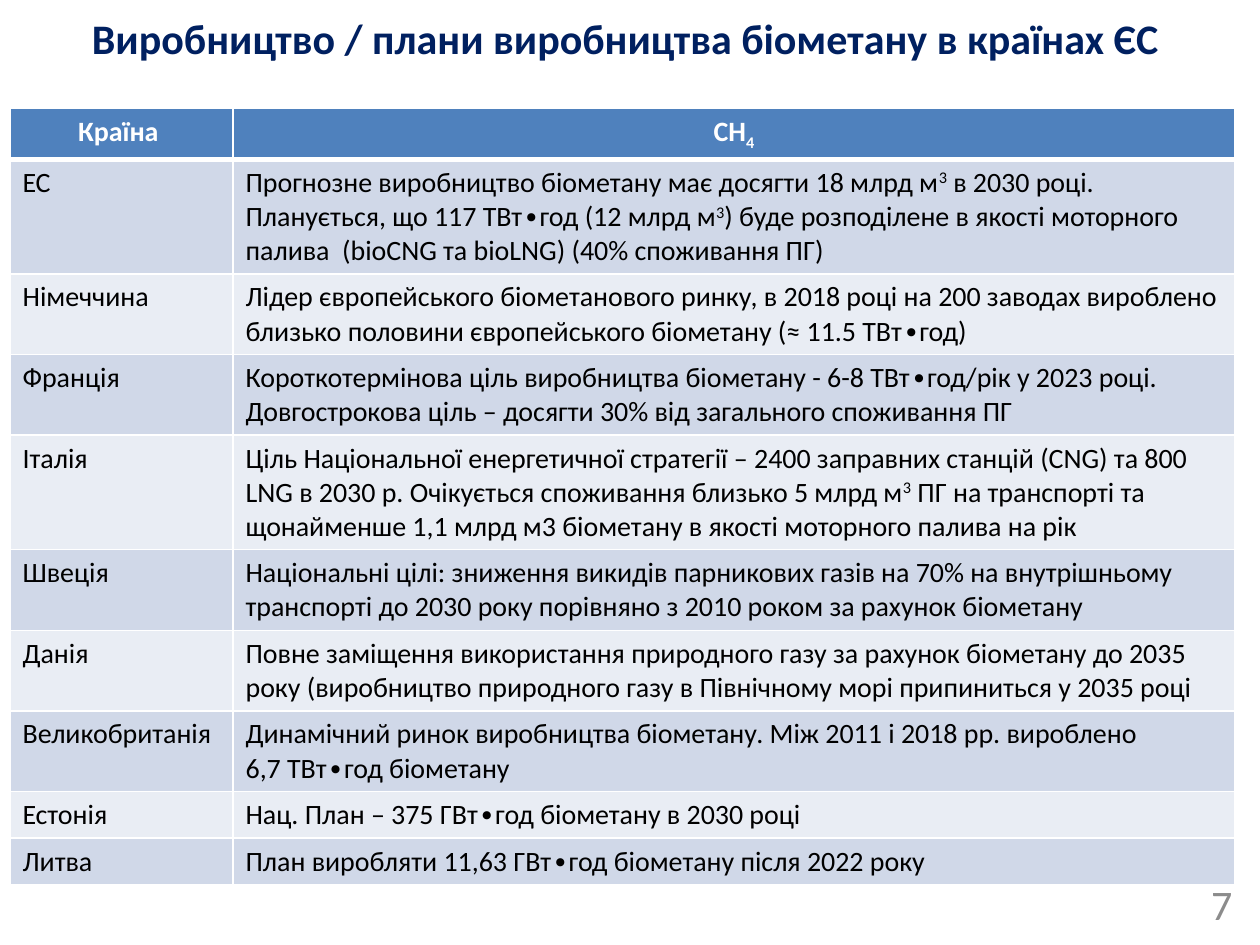
from dataclasses import dataclass
from typing import NamedTuple

from lxml import etree
from pptx import Presentation
from pptx.dml.color import RGBColor
from pptx.enum import text
from pptx.oxml import ns
from pptx.util import Inches, Pt


@dataclass(frozen=True)
class Theme:
    font: str = "Calibri"
    title_size: int = 24
    table_size: int = 16
    number_size: int = 24
    navy: str = "002060"
    gray: str = "8C8C8C"
    white: str = "FFFFFF"
    black: str = "000000"
    header: str = "4F81BD"
    bands: tuple[str, str] = ("D0D8E8", "E9EDF4")


class Style(NamedTuple):
    size: int
    color: str
    bold: bool = False


class Span(NamedTuple):
    text: str
    baseline: int = 0  # percent: positive raises, negative lowers


class Row(NamedTuple):
    country: str
    spans: list[Span]
    lines: int


THEME = Theme()
CUBED = Span("3", 30)
LINE_HEIGHT, ROW_PADDING = 0.27, 0.1

HEADER = Row("Країна ", [Span("СН"), Span("4", -25)], 1)
COUNTRIES = [
    Row("ЕС", [
        Span("Прогнозне виробництво біометану має досягти 18 млрд м"), CUBED,
        Span(" в 2030 році. Планується, що 117 ТВт∙год (12 млрд м"), CUBED,
        Span(") буде розподілене в якості моторного палива  "
             "(bioCNG та bioLNG) (40% споживання ПГ)")], 3),
    Row("Німеччина", [
        Span("Лідер європейського біометанового ринку, в 2018 році на 200 заводах "
             "вироблено близько половини європейського біометану (≈ 11.5 ТВт∙год)")], 2),
    Row("Франція", [
        Span("Короткотермінова ціль виробництва біометану - 6-8 ТВт∙год/рік у 2023 році. "
             "Довгострокова ціль – досягти 30% від загального споживання ПГ")], 2),
    Row("Італія", [
        Span("Ціль Національної енергетичної стратегії – 2400 заправних станцій (CNG) "
             "та 800 LNG в 2030 р. Очікується споживання близько 5 млрд м"), CUBED,
        Span(" ПГ на транспорті та щонайменше 1,1 млрд м3 біометану "
             "в якості моторного палива на рік")], 3),
    Row("Швеція", [
        Span("Національні цілі: зниження викидів парникових газів на 70% на внутрішньому "
             "транспорті до 2030 року порівняно з 2010 роком за рахунок біометану")], 2),
    Row("Данія", [
        Span("Повне заміщення використання природного газу за рахунок біометану до 2035 "
             "року (виробництво природного газу в Північному морі припиниться у 2035 році")], 2),
    Row("Великобританія", [
        Span("Динамічний ринок виробництва біометану. Між 2011 і 2018 рр. вироблено \n"
             "6,7 ТВт∙год біометану")], 2),
    Row("Естонія", [Span("Нац. План – 375 ГВт∙год біометану в 2030 році")], 1),
    Row("Литва", [Span("План виробляти 11,63 ГВт∙год біометану після 2022 року")], 1),
]


def write(frame, spans: list[Span], style: Style, align=text.PP_ALIGN.LEFT) -> None:
    """Fill the first paragraph run by run; a newline becomes a line break."""
    para = frame.paragraphs[0]
    para.alignment = align
    for span in spans:
        for index, line in enumerate(span.text.split("\n")):
            if index:
                para.add_line_break()
            run = para.add_run()
            run.text = line
            run.font.name = THEME.font
            run.font.size = Pt(style.size)
            run.font.bold = style.bold
            run.font.color.rgb = RGBColor.from_string(style.color)
            if span.baseline:
                run._r.get_or_add_rPr().set("baseline", str(span.baseline * 1000))


def add_text(page, left: float, top: float, width: float, height: float,
             content: str, style: Style, align, anchor) -> None:
    box = page.shapes.add_textbox(Inches(left), Inches(top), Inches(width), Inches(height))
    box.text_frame.word_wrap = True
    box.text_frame.vertical_anchor = anchor
    write(box.text_frame, [Span(content)], style, align)


def set_borders(cell, top: int, bottom: int) -> None:
    properties = cell._tc.get_or_add_tcPr()
    for side, width in (("lnL", 1), ("lnR", 1), ("lnT", top), ("lnB", bottom)):
        line = etree.SubElement(properties, ns.qn(f"a:{side}"), w=str(Pt(width)))
        fill = etree.SubElement(line, ns.qn("a:solidFill"))
        etree.SubElement(fill, ns.qn("a:srgbClr"), val=THEME.white)


def add_country_table(page) -> None:
    rows = [HEADER, *COUNTRIES]
    heights = [Inches(row.lines * LINE_HEIGHT + ROW_PADDING) for row in rows]
    table = page.shapes.add_table(len(rows), 2, Inches(0.08), Inches(0.86),
                                  Inches(9.72), sum(heights)).table
    table.first_row = table.horz_banding = False
    for column, width in zip(table.columns, (1.77, 7.95)):
        column.width = Inches(width)

    for index, row in enumerate(rows):
        table.rows[index].height = heights[index]
        is_header = index == 0
        fill = THEME.header if is_header else THEME.bands[(index - 1) % 2]
        style = Style(THEME.table_size, THEME.white if is_header else THEME.black, is_header)
        align = text.PP_ALIGN.CENTER if is_header else text.PP_ALIGN.LEFT
        for column, spans in enumerate(([Span(row.country)], row.spans)):
            cell = table.cell(index, column)
            # The thick rule under the header belongs to both adjoining rows
            set_borders(cell, top=3 if index == 1 else 1, bottom=3 if is_header else 1)
            cell.fill.solid()
            cell.fill.fore_color.rgb = RGBColor.from_string(fill)
            write(cell.text_frame, spans, style, align)


def main() -> None:
    deck = Presentation()
    deck.slide_width, deck.slide_height = Inches(10), Inches(7.5)
    page = deck.slides.add_slide(deck.slide_layouts[6])

    # Page number
    add_text(page, 7.55, 6.97, 2.33, 0.4, "7", Style(THEME.number_size, THEME.gray),
             text.PP_ALIGN.RIGHT, text.MSO_ANCHOR.MIDDLE)

    # Countries and their plans
    add_country_table(page)

    # Title
    add_text(page, 0.43, 0.05, 9.07, 0.88,
             "Виробництво / плани виробництва біометану в країнах ЄС",
             Style(THEME.title_size, THEME.navy, True),
             text.PP_ALIGN.CENTER, text.MSO_ANCHOR.TOP)

    deck.save("out.pptx")


if __name__ == "__main__":
    main()
